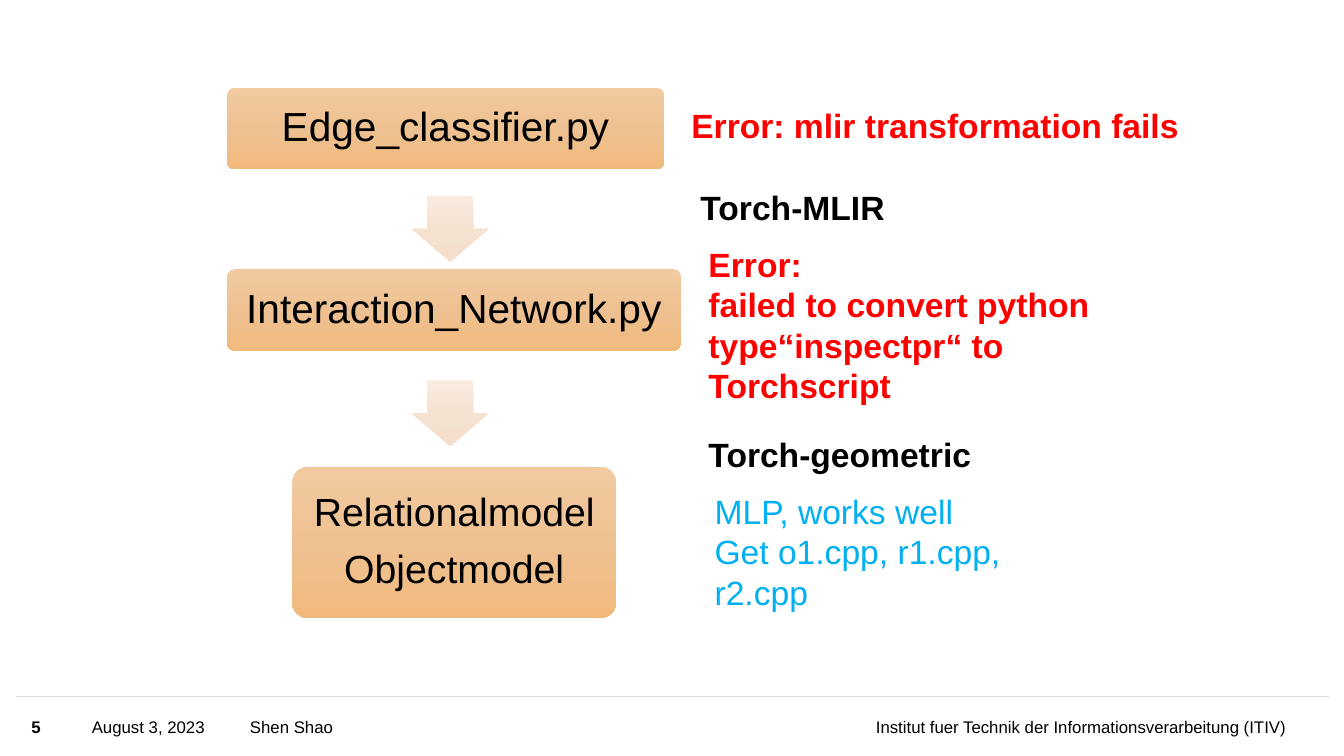
"""Build the slide showing which model files convert and which fail."""
from copy import deepcopy

from lxml import etree
from pptx import Presentation
from pptx.dml.color import RGBColor
from pptx.enum.shapes import MSO_CONNECTOR, MSO_SHAPE
from pptx.enum.text import MSO_ANCHOR, PP_ALIGN
from pptx.oxml.ns import qn
from pptx.util import Inches, Pt

ROUNDED, DOWN_ARROW = MSO_SHAPE.ROUNDED_RECTANGLE, MSO_SHAPE.DOWN_ARROW
STRAIGHT = MSO_CONNECTOR.STRAIGHT
TOP, MIDDLE = MSO_ANCHOR.TOP, MSO_ANCHOR.MIDDLE
LEFT, CENTER, RIGHT = PP_ALIGN.LEFT, PP_ALIGN.CENTER, PP_ALIGN.RIGHT

SLIDE_WIDTH, SLIDE_HEIGHT = 13.33, 7.5
FONT = "Arial"
BLACK, RED, BLUE, RULE_GREY = "000000", "FF0000", "00B0F0", "D9D9D9"
BOX_GRADIENT = ("F1CAA0", "EEC192", "F1BA7D")
ARROW_GRADIENT = ("F8EBDF", "F5E2D1", "F5DECA")

# Places are left, top, width, height in percent of the slide.
STEPS = [
    (["Edge_classifier.py"], 29, (16.88, 11.6, 32.56, 10.8)),
    (["Interaction_Network.py"], 29, (16.88, 35.6, 33.83, 10.8)),
    (["Relationalmodel", "Objectmodel"], 28, (21.75, 61.73, 24.08, 20)),
]
ARROW_LEFT, ARROW_WIDTH, ARROW_HEIGHT = 30.65, 5.7, 8.67
ARROW_TOPS = (25.93, 50.33)
NOTES = [
    (["Error: mlir transformation fails"], RED, True, False, (50.7, 13.2, 38.1, 6.7)),
    (["Torch-MLIR"], BLACK, True, True, (51.38, 24.13, 24.15, 6.7)),
    (["Error:", "failed to convert python type“inspectpr“ to Torchscript"],
     RED, True, True, (51.98, 31.6, 31.13, 22.8)),
    (["Torch-geometric"], BLACK, True, False, (51.98, 56.8, 21.23, 6.7)),
    (["MLP, works well", "Get o1.cpp, r1.cpp, r2.cpp"],
     BLUE, False, True, (52.43, 64.27, 23.1, 17.5)),
]
FOOTER_TOP, FOOTER_HEIGHT = 92.27, 7.73
FOOTER = [
    ("5", True, LEFT, 2.33, 3.6),
    ("August 3, 2023", False, LEFT, 6.83, 11.25),
    ("Shen Shao", False, LEFT, 18.6, 40.28),
    ("Institut fuer Technik der Informationsverarbeitung (ITIV)", False, RIGHT, 60.24, 35.48),
]
FOOTER_RULE = (1.2, 92.1, 98.87, 92.1)


def color(value):
    """Turn a hex string into a colour."""
    return RGBColor.from_string(value)


def lengths(shares):
    """Turn alternating horizontal and vertical percentages into lengths."""
    sides = (SLIDE_WIDTH, SLIDE_HEIGHT) * 2
    return [Inches(share * side / 100) for share, side in zip(shares, sides)]


def write(box, lines, size, ink, bold=False, align=LEFT, anchor=TOP,
          insets=(0.1, 0.05), wrap=True, line_spacing=None, gap=0):
    """Fill a shape with one paragraph per line."""
    frame = box.text_frame
    frame.word_wrap = wrap
    frame.vertical_anchor = anchor
    frame.margin_left = frame.margin_right = Inches(insets[0])
    frame.margin_top = frame.margin_bottom = Inches(insets[1])
    for index, line in enumerate(lines):
        para = frame.add_paragraph() if index else frame.paragraphs[0]
        para.alignment = align
        if line_spacing:
            para.line_spacing = line_spacing
        if index < len(lines) - 1:
            para.space_after = Pt(gap)
        span = para.add_run()
        span.text = line
        span.font.name = FONT
        span.font.size = Pt(size)
        span.font.bold = bold
        span.font.color.rgb = color(ink)


def add_gradient_shape(slide, kind, place, adjustments, shades):
    """Add a borderless shape shaded from top to bottom."""
    shape = slide.shapes.add_shape(kind, *lengths(place))
    shape.shadow.inherit = False
    shape.line.fill.background()
    for index, value in enumerate(adjustments):
        shape.adjustments[index] = value
    shape.fill.gradient()
    shape.fill.gradient_angle = 270
    stop_list = shape.fill._xPr.find(qn("a:gradFill")).find(qn("a:gsLst"))
    stop_list.append(deepcopy(stop_list[0]))
    for index, (stop, shade) in enumerate(zip(shape.fill.gradient_stops, shades)):
        stop.position = index / (len(shades) - 1)
        stop.color.rgb = color(shade)
    return shape


def add_text(slide, place, lines, size, ink, **style):
    """Add a text box."""
    write(slide.shapes.add_textbox(*lengths(place)), lines, size, ink, **style)


def main():
    """Lay out the slide and save it."""
    deck = Presentation()
    deck.slide_width, deck.slide_height = Inches(SLIDE_WIDTH), Inches(SLIDE_HEIGHT)
    page = deck.slides.add_slide(deck.slide_layouts[6])

    rule = page.shapes.add_connector(STRAIGHT, *lengths(FOOTER_RULE))
    rule.line.color.rgb = color(RULE_GREY)
    rule.line.width = Pt(1)
    etree.SubElement(rule._element.spPr, qn("a:effectLst"))
    for text, bold, align, left, width in FOOTER:
        add_text(page, (left, FOOTER_TOP, width, FOOTER_HEIGHT), [text], 12, BLACK,
                 bold=bold, align=align, anchor=MIDDLE, insets=(0, 0))

    for lines, size, place in STEPS:
        step = add_gradient_shape(page, ROUNDED, place, [0.1], BOX_GRADIENT)
        write(step, lines, size, BLACK, align=CENTER, anchor=MIDDLE,
              insets=(0.12, 0.12), line_spacing=0.9, gap=11)
    for top in ARROW_TOPS:
        place = (ARROW_LEFT, top, ARROW_WIDTH, ARROW_HEIGHT)
        add_gradient_shape(page, DOWN_ARROW, place, [0.6, 0.5], ARROW_GRADIENT)
    for lines, ink, bold, wrap, place in NOTES:
        add_text(page, place, lines, 24, ink, bold=bold, wrap=wrap)

    deck.save("out.pptx")


if __name__ == "__main__":
    main()
